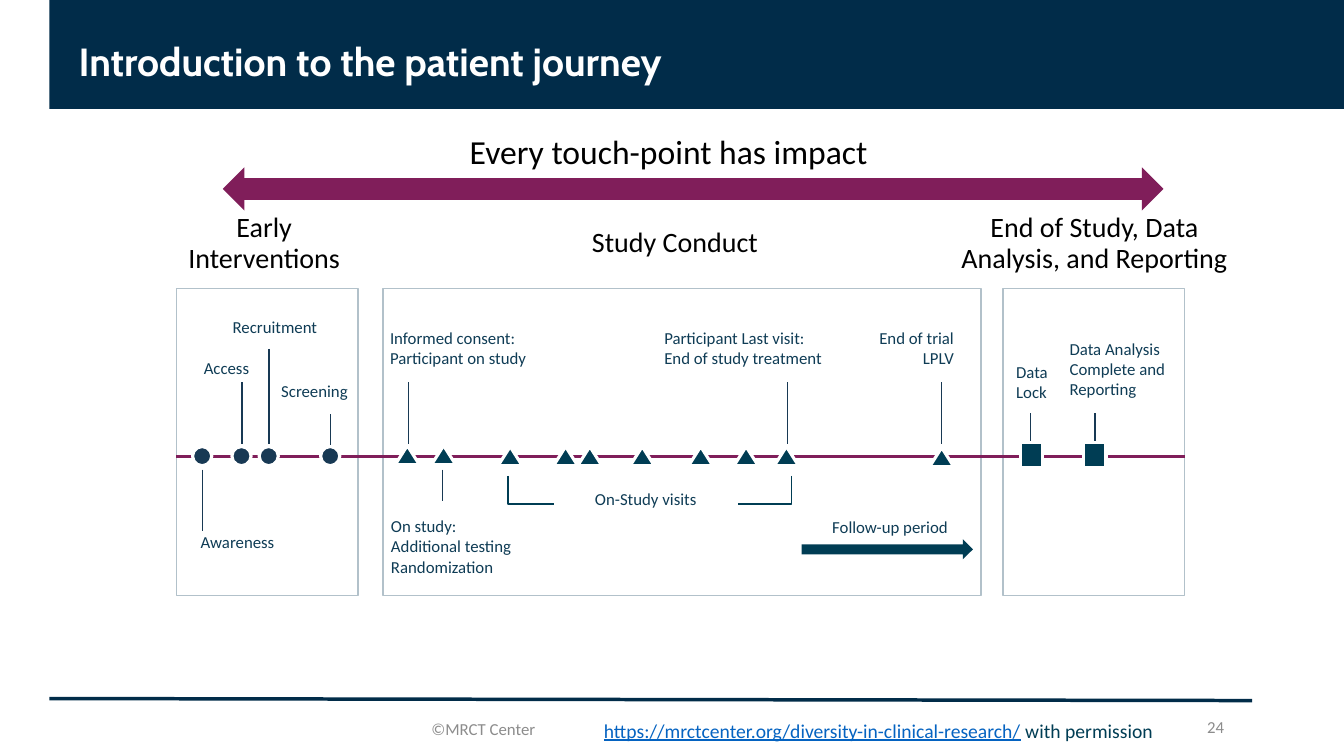
"""Build the patient journey timeline slide."""
import pptx
import pptx.util
import pptx.dml.color
import pptx.enum.shapes
import pptx.enum.text
import lxml.etree

Inches = pptx.util.Inches
Pt = pptx.util.Pt
RGB = pptx.dml.color.RGBColor.from_string
Kind = pptx.enum.shapes.MSO_SHAPE
Align = pptx.enum.text.PP_ALIGN
Anchor = pptx.enum.text.MSO_ANCHOR

hues = {
    "navy": "012C49", "teal": "003D54", "slate": "183954", "ink": "0F3C55",
    "plum": "801E5A", "frame": "B2C1CA", "gray": "8C8C8C", "link": "0563C1",
    "white": "FFFFFF", "black": "000000",
}


def write(box, text, size=12, color="ink", font="Calibri", bold=False, under=False,
          align=Align.LEFT, space=None, anchor=Anchor.TOP, wrap=True):
    frame = box.text_frame
    frame.word_wrap = wrap
    frame.auto_size = pptx.enum.text.MSO_AUTO_SIZE.NONE
    frame.vertical_anchor = anchor
    for i, line in enumerate(text.split("\n")):
        para = frame.add_paragraph() if i else frame.paragraphs[0]
        para.alignment = align
        para.line_spacing = space
        run = para.add_run()
        run.text = line
        run.font.name = font
        run.font.size = Pt(size)
        run.font.bold = bold
        run.font.underline = under
        run.font.color.rgb = RGB(hues[color])
    return frame


def paint(shape, fill=None, line=None, width=1):
    shape.shadow.inherit = False
    if fill:
        shape.fill.solid()
        shape.fill.fore_color.rgb = RGB(hues[fill])
    else:
        shape.fill.background()
    if line:
        shape.line.color.rgb = RGB(hues[line])
        shape.line.width = Pt(width)
    else:
        shape.line.fill.background()


deck = pptx.Presentation()
deck.slide_width = Inches(13.33)
deck.slide_height = Inches(7.5)
slide = deck.slides.add_slide(deck.slide_layouts[5])
shapes = slide.shapes

title = shapes.title
title.left, title.top, title.width, title.height = map(Inches, (0.68, 0.07, 9.7, 1.07))
write(title, "Introduction to the patient journey", size=28, color="white",
      font="Cabin", bold=True, anchor=Anchor.MIDDLE)

band = shapes.add_shape(Kind.RECTANGLE, Inches(0.49), 0, Inches(12.84), Inches(1.08))
paint(band, "navy")
shapes.element.remove(band.element)
shapes.element.insert(2, band.element)

for left, width in [(1.75, 1.8), (3.8, 5.93), (9.95, 1.8)]:
    phase = shapes.add_shape(Kind.RECTANGLE, Inches(left), Inches(2.86),
                             Inches(width), Inches(3.05))
    paint(phase, "white", "frame")

lines = [(0.49, 6.93, 12.42, 6.95, "navy", 2.5), (1.75, 4.53, 11.75, 4.53, "plum", 2.5)]
stems = [
    (2.01, 4.66, 5.27), (2.4, 3.79, 4.4), (2.67, 3.46, 4.4), (3.28, 4.11, 4.42),
    (4.05, 3.79, 4.4), (4.39, 4.66, 4.97), (7.81, 3.79, 4.4), (9.34, 3.79, 4.4),
    (10.22, 4.1, 4.4), (10.86, 4.1, 4.4),
]
lines += [(x, top, x, end, "slate", 1) for x, top, end in stems]
for x1, y1, x2, y2, color, width in lines:
    rule = shapes.add_connector(pptx.enum.shapes.MSO_CONNECTOR.STRAIGHT,
                                Inches(x1), Inches(y1), Inches(x2), Inches(y2))
    rule.line.color.rgb = RGB(hues[color])
    rule.line.width = Pt(width)
    lxml.etree.SubElement(rule.element.spPr, pptx.oxml.ns.qn("a:effectLst"))

for outer, inner in [(5.04, 5.49), (7.85, 7.32)]:
    pen = shapes.build_freeform(Inches(outer), Inches(4.72))
    pen.add_line_segments([(Inches(outer), Inches(5)), (Inches(inner), Inches(5))],
                          close=False)
    paint(pen.convert_to_shape(), line="teal")

marks = [
    (Kind.OVAL, 0.19, 0.19, 4.43, "slate", [1.91, 2.3, 2.57, 3.18]),
    (Kind.ISOSCELES_TRIANGLE, 0.24, 0.19, 4.42, "teal", [3.92, 4.28]),
    (Kind.ISOSCELES_TRIANGLE, 0.24, 0.19, 4.43, "teal",
     [4.94, 5.49, 5.73, 6.25, 6.83, 7.28, 7.68]),
    (Kind.ISOSCELES_TRIANGLE, 0.24, 0.19, 4.44, "teal", [9.22]),
    (Kind.RECTANGLE, 0.22, 0.25, 4.39, "teal", [10.12, 10.75]),
]
for kind, width, height, top, color, lefts in marks:
    for left in lefts:
        mark = shapes.add_shape(kind, Inches(left), Inches(top),
                                Inches(width), Inches(height))
        paint(mark, color, "white", 2.25)

arrows = [
    (Kind.LEFT_RIGHT_ARROW, 2.21, 1.66, 9.33, 0.43, "plum"),
    (Kind.RIGHT_ARROW, 7.95, 5.35, 1.7, 0.2, "teal"),
]
for kind, left, top, width, height, color in arrows:
    arrow = shapes.add_shape(kind, Inches(left), Inches(top), Inches(width), Inches(height))
    paint(arrow, color)

head = dict(size=20, color="black", align=Align.CENTER, space=0.9)
mid = dict(align=Align.CENTER)
right = dict(align=Align.RIGHT)
foot = dict(color="gray", anchor=Anchor.MIDDLE)
labels = [
    (4.56, 1.25, 4.18, 0.5, "Every touch-point has impact",
     dict(size=24, color="black", wrap=False)),
    (1.58, 2.07, 2.08, 0.71, "Early Interventions", head),
    (5.46, 2.22, 2.47, 0.4, "Study Conduct", head),
    (9.37, 2.07, 2.97, 0.71, "End of Study, Data Analysis, and Reporting", head),
    (1.79, 3.5, 0.78, 0.35, "Access", right),
    (2.21, 3.09, 1.3, 0.35, "Recruitment", {}),
    (2.62, 3.73, 1, 0.35, "Screening", mid),
    (1.71, 5.23, 1.29, 0.35, "Awareness", mid),
    (3.77, 3.2, 2.04, 0.58, "Informed consent: Participant on study", {}),
    (3.78, 5.07, 1.94, 0.81, "On study:\nAdditional testing\nRandomization", {}),
    (5.49, 4.8, 1.83, 0.35, "On-Study visits", mid),
    (6.49, 3.2, 2.33, 0.58, "Participant Last visit:\nEnd of study treatment", {}),
    (8.07, 3.2, 1.49, 0.58, "End of trial\nLPLV", right),
    (7.88, 5.08, 1.62, 0.35, "Follow-up period", right),
    (9.98, 3.54, 0.59, 0.58, "Data\nLock", {}),
    (10.51, 3.31, 1.51, 0.81, "Data Analysis Complete and Reporting", {}),
    (4.18, 7.03, 1.4, 0.4, "©MRCT Center", foot),
    (10.37, 7.01, 1.87, 0.4, "24", {**foot, **right}),
]
for left, top, width, height, text, style in labels:
    label = shapes.add_textbox(Inches(left), Inches(top), Inches(width), Inches(height))
    write(label, text, **style)

source = shapes.add_textbox(Inches(5.89), Inches(7.08), Inches(5.82), Inches(0.34))
frame = write(source, "https://mrctcenter.org/diversity-in-clinical-research/",
              size=14, color="link", under=True)
credit = frame.paragraphs[0].add_run()
credit.text = " with permission"
credit.font.name = "Calibri"
credit.font.size = Pt(14)
credit.font.color.rgb = RGB(hues["teal"])

deck.save("out.pptx")
